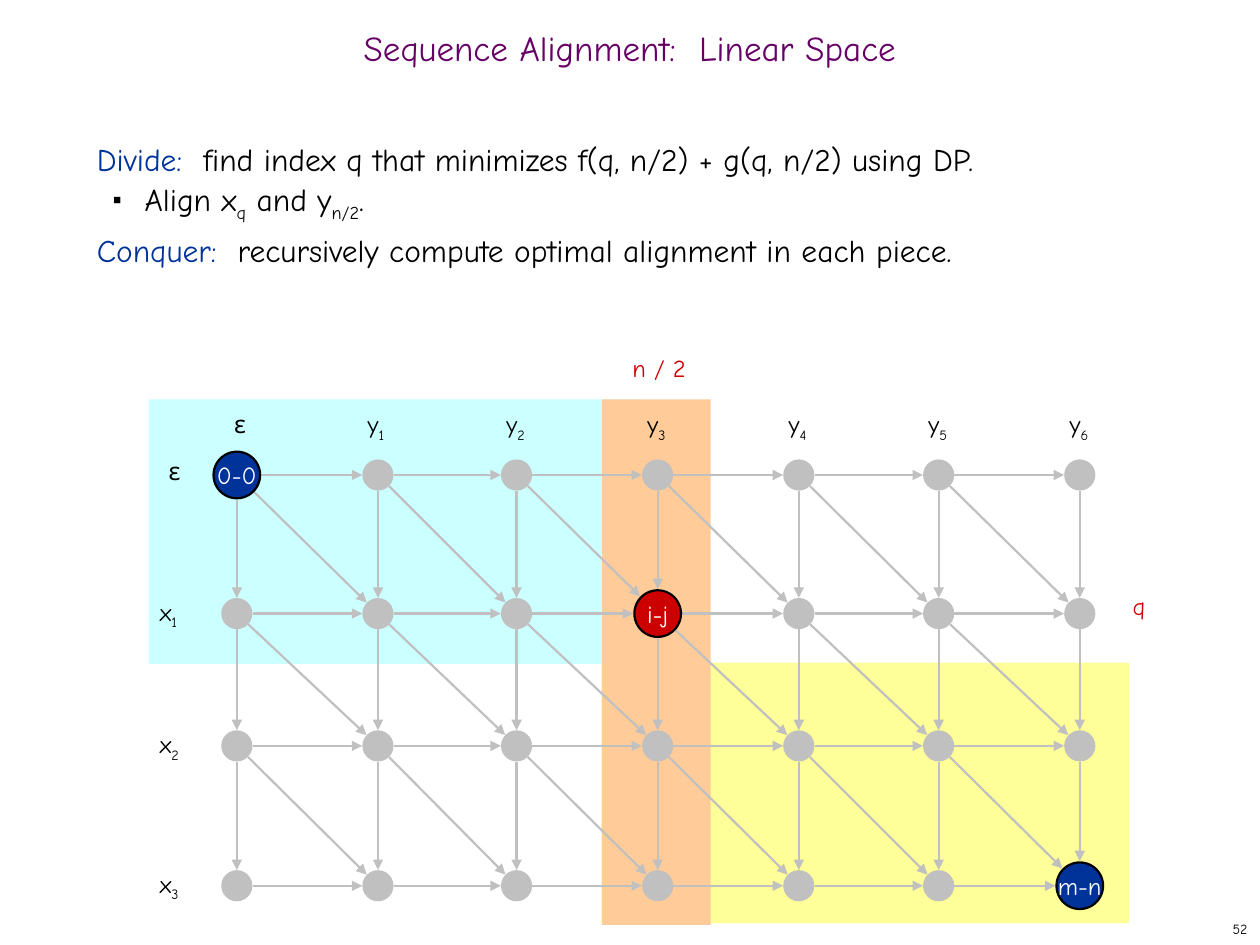
import math
import pptx
import pptx.util
import pptx.dml.color
import pptx.enum.shapes
import pptx.enum.text
import pptx.oxml
import pptx.oxml.ns

Inches, Pt = pptx.util.Inches, pptx.util.Pt
KIND = pptx.enum.shapes.MSO_SHAPE
LINK = pptx.enum.shapes.MSO_CONNECTOR.STRAIGHT
ALIGN = pptx.enum.text.PP_ALIGN
ANCHOR = pptx.enum.text.MSO_ANCHOR

# Content: a run is (text, colour, "sub" or "")
FONT = "Comic Neue"
HUES = {"black": "000000", "white": "FFFFFF", "gray": "C0C0C0", "blue": "003399",
        "red": "CC0000", "plum": "660066", "cyan": "CCFFFF", "peach": "FFCC99",
        "lemon": "FFFF99"}
TITLE = "Sequence Alignment:  Linear Space"
BODY = [
    [("Divide:  ", "blue", ""),
     ("find index q that minimizes f(q, n/2) + g(q, n/2) using DP.", "black", "")],
    [("Align x", "black", ""), ("q", "black", "sub"), (" and y", "black", ""),
     ("n/2", "black", "sub"), (".", "black", "")],
    [("Conquer:  ", "blue", ""),
     ("recursively compute optimal alignment in each piece.", "black", "")],
]
BULLETS = {1}
BANDS = [("lemon", 4.77, 5.26, 4.19, 2.07), ("cyan", 1.18, 3.17, 3.89, 2.1),
         ("peach", 4.78, 3.17, 0.86, 4.17)]
COLS = [1.88, 3, 4.1, 5.22, 6.34, 7.45, 8.57]
ROWS = [3.77, 4.87, 5.92, 7.03]
MARKED = {(0, 0): ("0-0", "blue"), (1, 3): ("i-j", "red"), (3, 6): ("m-n", "blue")}
SMALL, LARGE, GAP = 0.115, 0.185, 0.01
STEPS = [(0, 1), (1, 0), (1, 1)]

deck = pptx.Presentation()
deck.slide_width, deck.slide_height = Inches(10), Inches(7.5)
slide = deck.slides.add_slide(deck.slide_layouts[6])


def color(name):
    return pptx.dml.color.RGBColor.from_string(HUES[name])


def write(frame, paras, size=14, hue="black", align=ALIGN.LEFT, anchor=ANCHOR.TOP,
          wrap=True, lead=None):
    """Fill a text frame; a plain string counts as one run."""
    if isinstance(paras, str):
        paras = [[(paras, hue, "")]]
    frame.word_wrap, frame.vertical_anchor = wrap, anchor
    for i, runs in enumerate(paras):
        para = frame.paragraphs[0] if i == 0 else frame.add_paragraph()
        para.alignment = align
        if lead:
            para.line_spacing = lead
        for text, tint, pos in runs:
            run = para.add_run()
            run.text = text
            run.font.name, run.font.size = FONT, Pt(size)
            run.font.color.rgb = color(tint)
            if pos == "sub":
                run.font._element.set("baseline", "-25000")
    return frame


def label(x, y, w, h, paras, **form):
    box = slide.shapes.add_textbox(Inches(x), Inches(y), Inches(w), Inches(h))
    return write(box.text_frame, paras, **form)


def shape(kind, x, y, w, h, fill, edge=None):
    part = slide.shapes.add_shape(kind, Inches(x), Inches(y), Inches(w), Inches(h))
    part.shadow.inherit = False
    part.fill.solid()
    part.fill.fore_color.rgb = color(fill)
    if edge:
        part.line.color.rgb = color(edge)
        part.line.width = Pt(1.25)
    else:
        part.line.fill.background()
    return part


def radius(node):
    return LARGE if node in MARKED else SMALL


def arrow(start, end):
    """Join two nodes, stopping just outside each circle."""
    x1, y1 = COLS[start[1]], ROWS[start[0]]
    x2, y2 = COLS[end[1]], ROWS[end[0]]
    span = math.hypot(x2 - x1, y2 - y1)
    ux, uy = (x2 - x1) / span, (y2 - y1) / span
    a, b = radius(start) + GAP, radius(end) + GAP
    line = slide.shapes.add_connector(
        LINK, Inches(x1 + a * ux), Inches(y1 + a * uy),
        Inches(x2 - b * ux), Inches(y2 - b * uy))
    line.line.color.rgb = color("gray")
    line.line.width = Pt(1.25)
    tip = pptx.oxml.ns.qn("a:tailEnd")
    line.line._get_or_add_ln().makeelement(tip)
    head = line.line._get_or_add_ln()
    head.append(head.makeelement(tip, {"type": "triangle"}))
    props = line._element.spPr
    props.append(props.makeelement(pptx.oxml.ns.qn("a:effectLst")))


def bullet(para):
    props = para._p.get_or_add_pPr()
    props.set("marL", str(Inches(0.38)))
    props.set("indent", str(Inches(-0.25)))
    for tag, attrs in [("a:buSzPct", {"val": "35000"}), ("a:buChar", {"char": "■"})]:
        props.append(props.makeelement(pptx.oxml.ns.qn(tag), attrs))


# Coloured regions
for hue, *place in BANDS:
    shape(KIND.RECTANGLE, *place, hue)

# Title, body and page number
label(0, 0.17, 10, 0.5, TITLE, size=20, hue="plum", align=ALIGN.CENTER,
      anchor=ANCHOR.MIDDLE, lead=0.7)
body = label(0.67, 1, 8.58, 5.92, BODY, size=18, lead=Pt(26))
for i in BULLETS:
    bullet(body.paragraphs[i])
label(7.92, 7.25, 2.08, 0.25, "52", size=8, align=ALIGN.RIGHT,
      anchor=ANCHOR.MIDDLE, wrap=False)

# Grid: arrows first, then nodes
nodes = [(r, c) for r in range(len(ROWS)) for c in range(len(COLS))]
for r, c in nodes:
    for down, right in STEPS:
        if (r + down, c + right) in nodes:
            arrow((r, c), (r + down, c + right))
for node in nodes:
    r, c = node
    rad = radius(node)
    text, hue = MARKED.get(node, ("", "gray"))
    dot = shape(KIND.OVAL, COLS[c] - rad, ROWS[r] - rad, 2 * rad, 2 * rad, hue,
                "black" if text else "gray")
    if text:
        write(dot.text_frame, text, hue="white", align=ALIGN.CENTER,
              anchor=ANCHOR.MIDDLE, wrap=False)

# Row and column labels
label(1.24, 3.57, 0.45, 0.33, "ε")
label(1.76, 3.2, 0.45, 0.33, "ε")
for i, y in enumerate(ROWS[1:], 1):
    label(1.17, y - 0.18, 0.45, 0.37, [[("x", "black", ""), (str(i), "black", "sub")]])
for i, x in enumerate(COLS[1:], 1):
    label(x - 0.18, 3.2, 0.45, 0.37, [[("y", "black", ""), (str(i), "black", "sub")]])
label(8.89, 4.64, 0.4, 0.37, "q", hue="red")
label(4.92, 2.75, 0.92, 0.37, "n / 2", hue="red")

deck.save("out.pptx")
